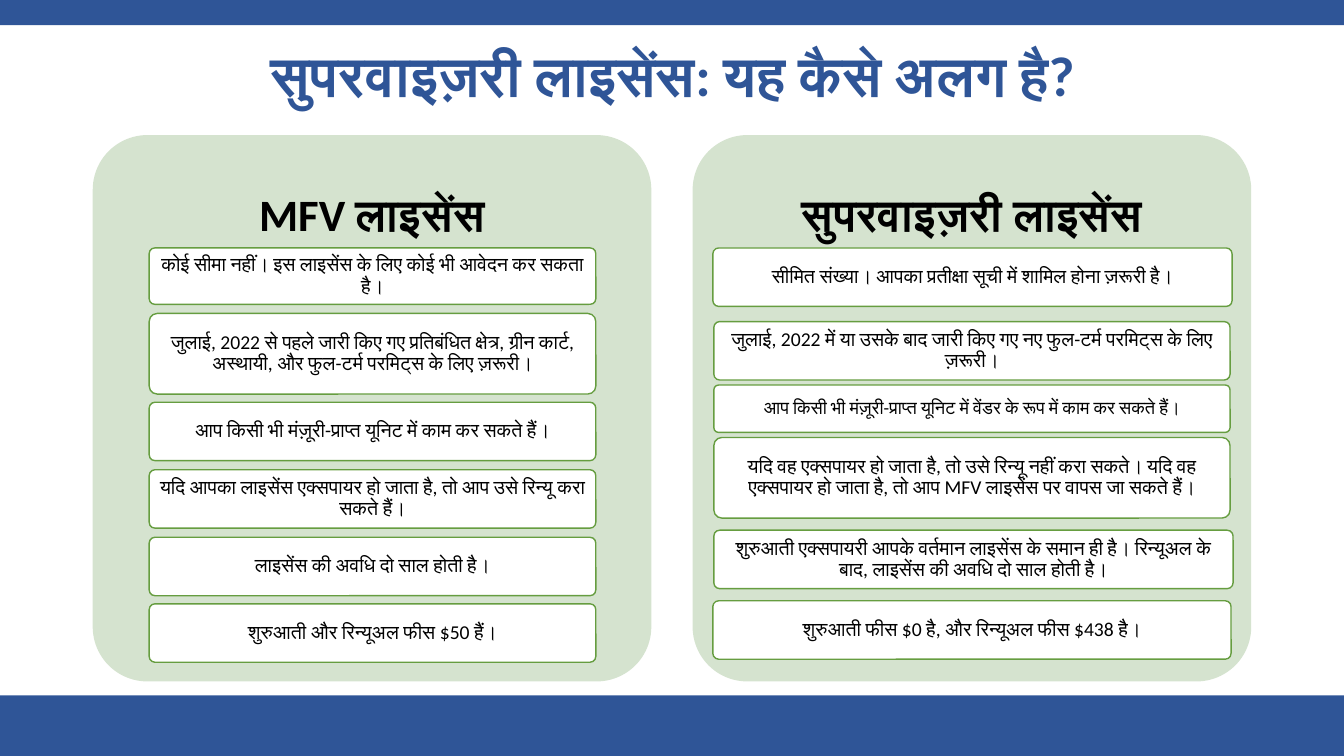
from pptx import Presentation
from pptx.dml.color import RGBColor
from pptx.enum import shapes, text
from pptx.oxml import ns
from pptx.util import Inches, Pt
from lxml import etree

FONT = "Calibri"
BLUE, PALE, GREEN = "2F5597", "D5E3CF", "669D40"
WHITE, BLACK = "FFFFFF", "000000"

TITLE = "सुपरवाइज़री लाइसेंस: यह कैसे अलग है?"
BANDS = [(0, 0.25), (6.9, 0.6)]  # top, height

# Each panel: left, heading, rows of (left, top, width, height, size, wording)
PANELS = [
    (0.92, "MFV लाइसेंस", [
        (1.48, 2.46, 4.43, 0.56, 14, "कोई सीमा नहीं। इस लाइसेंस के लिए कोई भी आवेदन कर सकता है।"),
        (1.48, 3.11, 4.43, 0.8, 14, "जुलाई, 2022 से पहले जारी किए गए प्रतिबंधित क्षेत्र, ग्रीन कार्ट, "
                                    "अस्थायी, और फुल-टर्म परमिट्स के लिए ज़रूरी।"),
        (1.48, 3.99, 4.43, 0.58, 14, "आप किसी भी मंज़ूरी-प्राप्त यूनिट में काम कर सकते हैं।"),
        (1.48, 4.66, 4.43, 0.58, 14, "यदि आपका लाइसेंस एक्सपायर हो जाता है, तो आप उसे रिन्यू करा सकते हैं।"),
        (1.48, 5.33, 4.43, 0.58, 14, "लाइसेंस की अवधि दो साल होती है।"),
        (1.48, 5.99, 4.43, 0.58, 14, "शुरुआती और रिन्यूअल फीस $50 हैं।"),
    ]),
    (6.87, "सुपरवाइज़री लाइसेंस", [
        (7.07, 2.46, 5.15, 0.58, 14, "सीमित संख्या। आपका प्रतीक्षा सूची में शामिल होना ज़रूरी है।"),
        (7.08, 3.19, 5.12, 0.58, 14, "जुलाई, 2022 में या उसके बाद जारी किए गए नए फुल-टर्म परमिट्स के लिए ज़रूरी।"),
        (7.08, 3.82, 5.12, 0.47, 13, "आप किसी भी मंज़ूरी-प्राप्त यूनिट में वेंडर के रूप में काम कर सकते हैं।"),
        (7.08, 4.34, 5.12, 0.8, 14, "यदि वह एक्सपायर हो जाता है, तो उसे रिन्यू नहीं करा सकते। यदि वह "
                                    "एक्सपायर हो जाता है, तो आप MFV लाइसेंस पर वापस जा सकते हैं।"),
        (7.08, 5.26, 5.15, 0.58, 14, "शुरुआती एक्सपायरी आपके वर्तमान लाइसेंस के समान ही है। रिन्यूअल के "
                                     "बाद, लाइसेंस की अवधि दो साल होती है।"),
        (7.07, 5.96, 5.14, 0.58, 14, "शुरुआती फीस $0 है, और रिन्यूअल फीस $438 है।"),
    ]),
]


def rgb(color):
    return RGBColor.from_string(color)


def add_box(s, kind, box, fill, line=None):
    sp = s.shapes.add_shape(kind, *map(Inches, box))
    sp.shadow.inherit = False
    sp.fill.solid()
    sp.fill.fore_color.rgb = rgb(fill)
    if line:
        sp.line.color.rgb = rgb(line)
        sp.line.width = Pt(1)
    else:
        sp.line.fill.background()
    if kind == shapes.MSO_SHAPE.ROUNDED_RECTANGLE:
        sp.adjustments[0] = 0.1
    return sp


def write(sp, wording, size, color, bold=False, insets=(0.1, 0.05, 0.1, 0.05)):
    tf = sp.text_frame
    tf.text = wording
    tf.word_wrap = True
    tf.auto_size = text.MSO_AUTO_SIZE.NONE
    tf.vertical_anchor = text.MSO_ANCHOR.MIDDLE
    tf.margin_left, tf.margin_top, tf.margin_right, tf.margin_bottom = map(Inches, insets)
    p = tf.paragraphs[0]
    p.alignment = text.PP_ALIGN.CENTER
    p.line_spacing = 0.9
    r = p.runs[0]
    r.font.size, r.font.bold, r.font.name = Pt(size), bold, FONT
    r.font.color.rgb = rgb(color)
    # Devanagari takes the complex-script font
    etree.SubElement(r.font._element, ns.qn("a:cs")).set("typeface", FONT)


def main():
    prs = Presentation()
    prs.slide_width, prs.slide_height = Inches(13.33), Inches(7.5)
    s = prs.slides.add_slide(prs.slide_layouts[5])

    # Bands along the top and bottom
    for top, height in BANDS:
        add_box(s, shapes.MSO_SHAPE.RECTANGLE, (0, top, 13.33, height), BLUE)

    # Title
    title = s.shapes.title
    title.left, title.top, title.width, title.height = map(Inches, (0.92, 0.4, 11.5, 0.75))
    write(title, TITLE, 40, BLUE, bold=True)

    # Panels with their rows
    rounded = shapes.MSO_SHAPE.ROUNDED_RECTANGLE
    for left, heading, rows in PANELS:
        panel = add_box(s, rounded, (left, 1.34, 5.54, 5.42), PALE)
        # The text area of a rounded shape already sits 0.16 inside its edges
        write(panel, heading, 32, BLACK, bold=True, insets=(0, 0, 0, 3.79))
        for *box, size, wording in rows:
            row = add_box(s, rounded, box, WHITE, GREEN)
            write(row, wording, size, BLACK, insets=(0.04, 0.03, 0.04, 0.03))

    prs.save("out.pptx")


if __name__ == "__main__":
    main()
